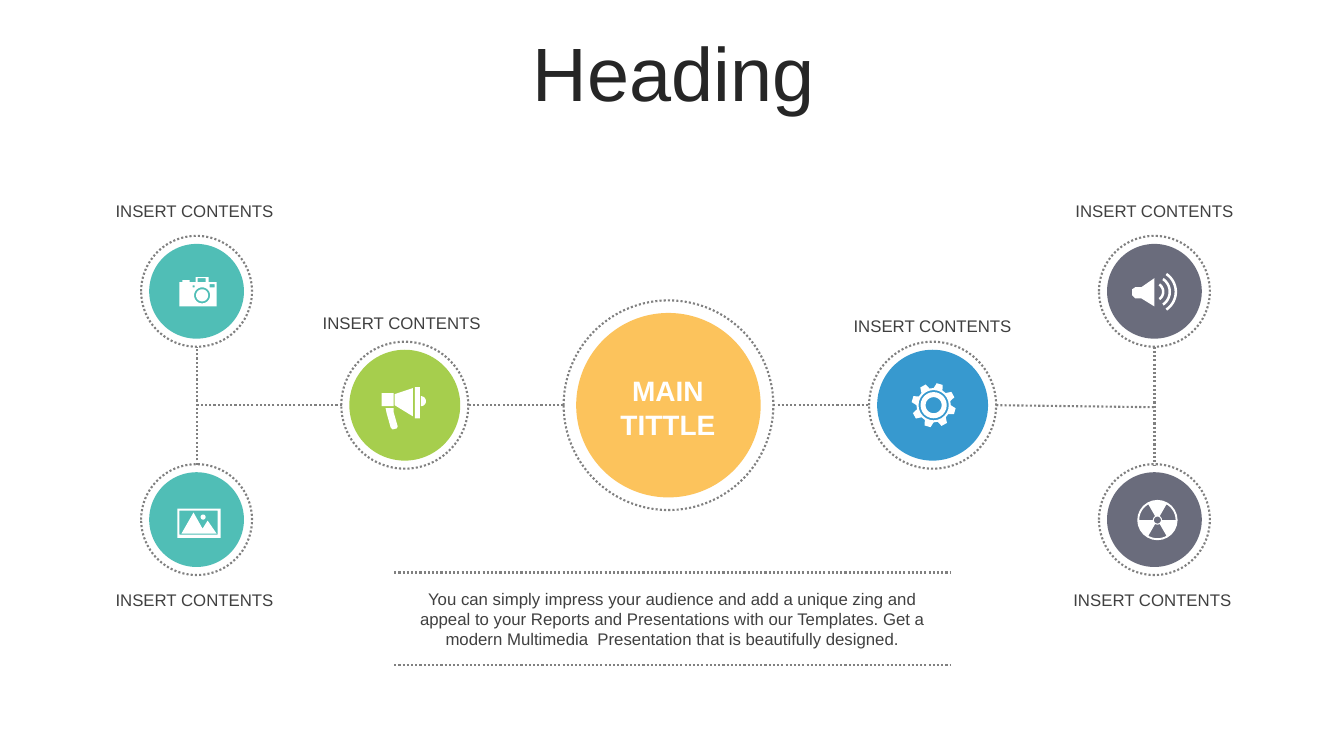
from dataclasses import dataclass
from math import cos, radians, sin

from lxml import etree
from pptx import Presentation
from pptx.dml.color import RGBColor
from pptx.enum.dml import MSO_LINE
from pptx.enum.shapes import MSO_CONNECTOR, MSO_SHAPE
from pptx.enum.text import MSO_ANCHOR, MSO_AUTO_SIZE, PP_ALIGN
from pptx.oxml.ns import qn
from pptx.util import Emu, Inches, Pt

STRAIGHT, OVAL, DOTTED = MSO_CONNECTOR.STRAIGHT, MSO_SHAPE.OVAL, MSO_LINE.ROUND_DOT
CENTER, MIDDLE, TOP = PP_ALIGN.CENTER, MSO_ANCHOR.MIDDLE, MSO_ANCHOR.TOP
NO_FIT = MSO_AUTO_SIZE.NONE

WHITE = RGBColor(0xFF, 0xFF, 0xFF)
INK = RGBColor(0x26, 0x26, 0x26)
TEXT_GRAY = RGBColor(0x40, 0x40, 0x40)
DOT_GRAY = RGBColor(0x80, 0x80, 0x80)
ORANGE = RGBColor(0xFB, 0xA2, 0x00)
BLUE = RGBColor(0x06, 0x80, 0xC3)
NAVY = RGBColor(0x2C, 0x2F, 0x45)
GREEN = RGBColor(0x90, 0xC2, 0x21)
TEAL = RGBColor(0x07, 0xA3, 0x98)

# Grid: square cells of a tenth of an inch; icons use tenths of a cell
CELL = Inches(0.1)
ICON_UNIT = CELL / 10
LEFT, INNER_LEFT, MIDDLE_X, INNER_RIGHT, RIGHT = 19.5, 40.15, 66.3, 92.5, 114.5
UPPER, AXIS, LOWER = 28.9, 40.2, 51.55

Outline = list[tuple[float, float]]
Icon = list[Outline]


def cells(count: float) -> Emu:
    return Emu(round(count * CELL))


# Outlines of the icons, around the centre of their circle
def polar(x: float, y: float, radius: float, angle: float) -> tuple[float, float]:
    return x + radius * cos(radians(angle)), y + radius * sin(radians(angle))


def arc(x: float, y: float, radius: float, start: float, end: float) -> Outline:
    return [polar(x, y, radius, start + (end - start) * step / 24) for step in range(25)]


def circle(x: float, y: float, radius: float) -> Outline:
    return arc(x, y, radius, 0, 360)


def band(x: float, y: float, inner: float, outer: float, start: float, end: float) -> Outline:
    return arc(x, y, outer, start, end) + arc(x, y, inner, end, start)


def block(left: float, top: float, right: float, bottom: float) -> Outline:
    return [(left, top), (right, top), (right, bottom), (left, bottom)]


CAMERA: Icon = [
    [(-17, -9), (-14, -9), (-14, -11), (-7, -11), (-7, -9), (-1, -9), (-1, -14),
     (12, -14), (12, -9), (20, -9), (20, 15), (-17, 15)],
    block(1, -13, 9, -9), block(-4, -6, -2, -4), block(13, -7, 18, -4),
    circle(5.5, 4, 8), circle(5.5, 4, 6),
]
LANDSCAPE: Icon = [
    block(-19, -11, 24, 18), block(-17, -9, 21, 15), circle(6.5, -2.5, 2.5),
    [(-3, -7), (6, 9), (11, 1), (20, 14), (-15, 14)],
]
MEGAPHONE: Icon = [
    block(-23, -12, -11, 1), block(10, -18, 15, 13), arc(16, -4, 5, -90, 90),
    [(-10, -11), (8, -17), (8, 11), (-10, 0)],
    [(-19, 3), (-11, 3), (-11, 7), (-7, 21), (-8, 23), (-12, 24), (-14, 22), (-18, 8)],
]
GEAR: Icon = [
    [polar(1, 0, radius, angle + 45 * tooth) for tooth in range(8)
     for radius, angle in ((17, -90), (22, -82), (22, -66), (17, -59))],
    circle(1, 0, 15), circle(1, 0, 13), circle(1, 0, 8),
]
SPEAKER: Icon = [
    [(0, -13), (0, 15), (-13, 7), (-19, 7), (-22, 4), (-22, -2), (-19, -4), (-13, -4)],
    *(band(0, 0.5, outer - 2.5, outer, -56, 56) for outer in (10, 16.5, 22.5)),
]
RADIATION: Icon = [
    circle(3, 0.5, 20), circle(3, 0.5, 3.5),
    *(band(3, 0.5, 4.5, 18, start, start + 60) for start in (-60, 60, 180)),
]


@dataclass
class Node:
    x: float
    y: float
    disc: float
    ring: float
    color: RGBColor
    opacity: int
    icon: Icon
    label_x: float = 0
    label_top: float = 0


@dataclass
class Caption:
    text: str
    left: float
    top: float
    width: float
    height: float
    style: dict
    wrap: bool = True


NODES = [
    Node(MIDDLE_X, AXIS, 18.3, 20.8, ORANGE, 64, []),
    Node(INNER_RIGHT, AXIS, 11, 12.6, BLUE, 80, GEAR, 92.5, 30.8),
    Node(RIGHT, UPPER, 9.4, 11, NAVY, 70, SPEAKER, 114.5, 19.4),
    Node(RIGHT, LOWER, 9.4, 11, NAVY, 70, RADIATION, 114.3, 58),
    Node(INNER_LEFT, AXIS, 11, 12.6, GREEN, 80, MEGAPHONE, 39.85, 30.5),
    Node(LEFT, LOWER, 9.4, 11, TEAL, 70, LANDSCAPE, 19.3, 58),
    Node(LEFT, UPPER, 9.4, 11, TEAL, 70, CAMERA, 19.3, 19.4),
]
LINKS = [
    (76.7, AXIS, 86.2, AXIS), (98.8, AXIS, RIGHT, 40.4), (RIGHT, 34.4, RIGHT, 46.1),
    (55.9, AXIS, 46.5, AXIS), (33.9, AXIS, LEFT, AXIS), (LEFT, 46.1, LEFT, 34.4),
]
RULES = [(39.1, row, 94.2, row) for row in (56.8, 66)]

HEADING_STYLE = {"size": Pt(54), "name": "Arial", "bold": False}
MAIN_STYLE = {"size": Pt(20), "name": "Arial", "bold": True}
BODY_STYLE = {"size": Pt(12), "name": "Arial", "bold": False}


def write(frame, text: str, style: dict, color: RGBColor) -> None:
    frame.text = text
    for para in frame.paragraphs:
        para.alignment = CENTER
        for key, value in style.items():
            setattr(para.runs[0].font, key, value)
        para.runs[0].font.color.rgb = color


def dot(line) -> None:
    line.color.rgb, line.width, line.dash_style = DOT_GRAY, Pt(1.5), DOTTED


def draw_circle(page, node: Node, size: float):
    oval = page.shapes.add_shape(OVAL, cells(node.x - size / 2), cells(node.y - size / 2),
                                 cells(size), cells(size))
    oval.shadow.inherit = False
    return oval


def draw_node(page, node: Node) -> None:
    disc = draw_circle(page, node, node.disc)
    disc.fill.solid()
    disc.fill.fore_color.rgb = node.color
    disc.line.fill.background()
    tint = next(disc.fill._xPr.iter(qn("a:srgbClr")))
    etree.SubElement(tint, qn("a:alpha"), val=str(node.opacity * 1000))
    ring = draw_circle(page, node, node.ring)
    ring.fill.background()
    dot(ring.line)


def draw_line(page, ends: tuple) -> None:
    link = page.shapes.add_connector(STRAIGHT, *(cells(end) for end in ends))
    dot(link.line)
    etree.SubElement(link._element.spPr, qn("a:effectLst"))


def draw_icon(page, node: Node) -> None:
    outlines = [[(node.x * CELL + x * ICON_UNIT, node.y * CELL + y * ICON_UNIT)
                 for x, y in outline] for outline in node.icon]
    builder = page.shapes.build_freeform(*outlines[0][0])
    for index, outline in enumerate(outlines):
        if index:
            builder.move_to(*outline[0])
        builder.add_line_segments(outline[1:], close=True)
    icon = builder.convert_to_shape()
    icon.shadow.inherit = False
    icon.fill.solid()
    icon.fill.fore_color.rgb = WHITE
    icon.line.fill.background()


def draw_caption(page, caption: Caption, color: RGBColor) -> None:
    box = page.shapes.add_textbox(*(cells(length) for length in (
        caption.left, caption.top, caption.width, caption.height)))
    box.text_frame.word_wrap = caption.wrap
    box.text_frame.vertical_anchor = TOP
    write(box.text_frame, caption.text, caption.style, color)


def main() -> None:
    deck = Presentation()
    deck.slide_width, deck.slide_height = Inches(13.33), Inches(7.5)
    page = deck.slides.add_slide(deck.slide_layouts[5])

    # Heading
    title = page.shapes.title
    title.left, title.top, title.width, title.height = map(cells, (3.5, 3.7, 126.6, 7.9))
    title.text_frame.auto_size = NO_FIT
    title.text_frame.vertical_anchor = MIDDLE
    write(title.text_frame, "Heading", HEADING_STYLE, INK)
    title.text_frame.paragraphs[0].line_spacing = 0.9

    # Circles, dotted lines, icons and labels
    for node in NODES:
        draw_node(page, node)
    for ends in LINKS + RULES:
        draw_line(page, ends)
    for node in NODES:
        if node.icon:
            draw_icon(page, node)
            draw_caption(page, Caption("INSERT CONTENTS", node.label_x - 9, node.label_top,
                                       18, 3, BODY_STYLE, wrap=False), TEXT_GRAY)

    # Centre title and summary
    draw_caption(page, Caption("MAIN\nTITTLE", 58.4, 36.6, 15.7, 7.7, MAIN_STYLE), WHITE)
    draw_caption(page, Caption(
        "You can simply impress your audience and add a unique zing and appeal to your "
        "Reports and Presentations with our Templates. Get a modern Multimedia  "
        "Presentation that is beautifully designed.",
        38.8, 57.9, 55.8, 7.1, BODY_STYLE), TEXT_GRAY)

    deck.save("out.pptx")


if __name__ == "__main__":
    main()
